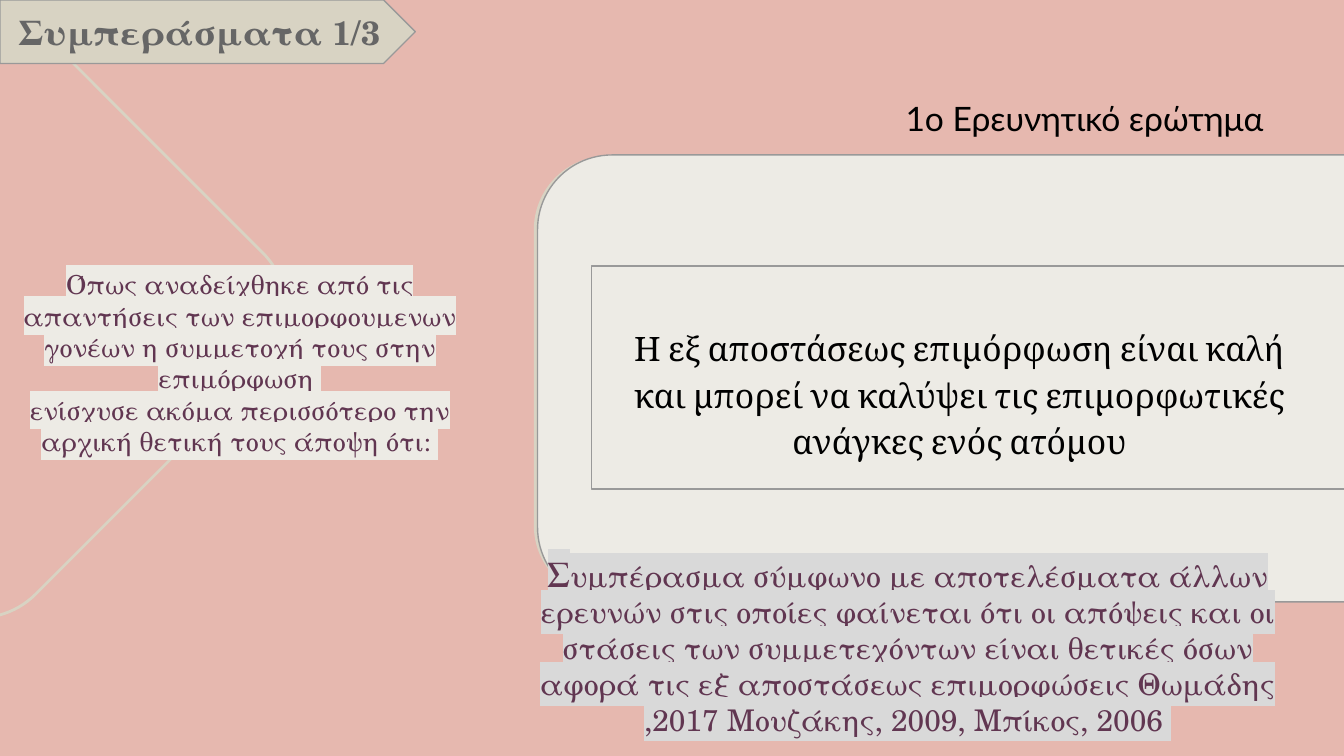
from lxml import etree
from pptx import Presentation
from pptx.dml.color import RGBColor
from pptx.enum.shapes import MSO_SHAPE
from pptx.enum.text import MSO_ANCHOR, MSO_AUTO_SIZE, PP_ALIGN
from pptx.oxml.ns import qn
from pptx.util import Pt

ROUNDED = MSO_SHAPE.ROUNDED_RECTANGLE
PENTAGON = MSO_SHAPE.PENTAGON
RECTANGLE = MSO_SHAPE.RECTANGLE
TOP, MIDDLE, BOTTOM = MSO_ANCHOR.TOP, MSO_ANCHOR.MIDDLE, MSO_ANCHOR.BOTTOM
LEFT, CENTER = PP_ALIGN.LEFT, PP_ALIGN.CENTER
NO_AUTOFIT = MSO_AUTO_SIZE.NONE

COLORS = {
    "background": "E6B8AF",
    "sand": "D8D3C3",
    "cream": "EDEBE5",
    "outline": "999999",
    "label": "666666",
    "plum": "613651",
    "silver": "D9D9D9",
    "black": "000000",
}
SERIF = "TeX Gyre Schola"


class SlideBuilder:
    """Hold the style and the current slide, and add each kind of element."""

    def __init__(self, presentation):
        self.slide = presentation.slides.add_slide(presentation.slide_layouts[5])
        fill = self.slide.background.fill
        fill.solid()
        fill.fore_color.rgb = self.color("background")

    def color(self, name):
        return RGBColor.from_string(COLORS[name])

    def shape(self, kind, box, fill=None, line=None, width=0.75, rotation=0):
        shape = self.slide.shapes.add_shape(kind, *map(Pt, box))
        shape.shadow.inherit = False
        shape.rotation = rotation
        if fill:
            shape.fill.solid()
            shape.fill.fore_color.rgb = self.color(fill)
        else:
            shape.fill.background()
        if line:
            shape.line.color.rgb = self.color(line)
            shape.line.width = Pt(width)
        else:
            shape.line.fill.background()
        return shape

    def title(self, box, paragraphs, **style):
        title = self.slide.shapes.title
        title.left, title.top, title.width, title.height = map(Pt, box)
        self.slide.shapes._spTree.append(title._element)
        self.set_text(title, paragraphs, **style)

    def text(self, box, paragraphs, **style):
        self.set_text(self.slide.shapes.add_textbox(*map(Pt, box)), paragraphs, **style)

    def set_text(self, shape, paragraphs, size, font=SERIF, color="plum", bold=False,
                 align=CENTER, anchor=TOP, spacing=1.0, highlight=None):
        frame = shape.text_frame
        frame.word_wrap = True
        frame.auto_size = NO_AUTOFIT
        frame.vertical_anchor = anchor
        frame.margin_left = frame.margin_right = Pt(7.2)
        frame.margin_top = frame.margin_bottom = Pt(7.2)
        for index, runs in enumerate(paragraphs):
            paragraph = frame.add_paragraph() if index else frame.paragraphs[0]
            paragraph.alignment = align
            paragraph.line_spacing = spacing
            paragraph.font.name = font
            paragraph.font.size = Pt(size)
            paragraph.font.bold = bold
            paragraph.font.color.rgb = self.color(color)
            for text, run_size in runs:
                run = paragraph.add_run()
                run.text = text
                if run_size:
                    run.font.size = Pt(run_size)
                if highlight:
                    self.highlight(run, highlight)

    def highlight(self, run, name):
        mark = etree.SubElement(run.font._element, qn("a:highlight"))
        etree.SubElement(mark, qn("a:srgbClr"), val=COLORS[name])


def main():
    presentation = Presentation()
    presentation.slide_width, presentation.slide_height = Pt(720), Pt(405)
    builder = SlideBuilder(presentation)

    builder.shape(ROUNDED, (-174, 23, 297.5, 258.5), line="sand", width=1.5, rotation=45)
    builder.shape(ROUNDED, (286, 83.5, 512, 237.5), fill="sand")
    builder.title(
        (0, 140.5, 257, 111.5),
        [[("Όπως αναδείχθηκε από τις απαντήσεις των επιμορφουμενων γονέων "
           "η συμμετοχή τους στην επιμόρφωση ", None)],
         [("ενίσχυσε ακόμα περισσότερο την αρχική θετική τους άποψη ότι: ", None)]],
        size=14, anchor=BOTTOM, highlight="cream")
    builder.text((478, 45.5, 242, 35), [[("1ο Ερευνητικό ερώτημα", None)]],
                 size=18, font="Lato", color="black", align=LEFT)
    banner = builder.shape(PENTAGON, (0, 0, 222.5, 34), fill="sand", line="outline")
    builder.set_text(banner, [[("Συμπεράσματα 1/3", None)]],
                     size=18, color="label", bold=True, anchor=MIDDLE)
    builder.shape(ROUNDED, (288, 83, 512, 239.5), fill="cream", line="outline")
    builder.text(
        (317, 165.5, 394, 111),
        [[("Η εξ αποστάσεως επιμόρφωση είναι καλή και μπορεί να καλύψει "
           "τις επιμορφωτικές ανάγκες ενός ατόμου", None)]],
        size=18, font="Cambria", color="black", spacing=1.15)
    builder.text(
        (268, 289.5, 436.5, 45),
        [[("Σ", 18),
          ("υμπέρασμα σύμφωνο με αποτελέσματα άλλων ερευνών στις οποίες φαίνεται "
           "ότι οι απόψεις και οι στάσεις των συμμετεχόντων είναι θετικές όσων "
           "αφορά τις εξ αποστάσεως επιμορφώσεις Θωμάδης ,2017 Μουζάκης, 2009, "
           "Μπίκος, 2006 ", None)]],
        size=16, highlight="silver")
    builder.shape(RECTANGLE, (317, 142.5, 404, 119.5), line="outline")

    presentation.save("out.pptx")


if __name__ == "__main__":
    main()
